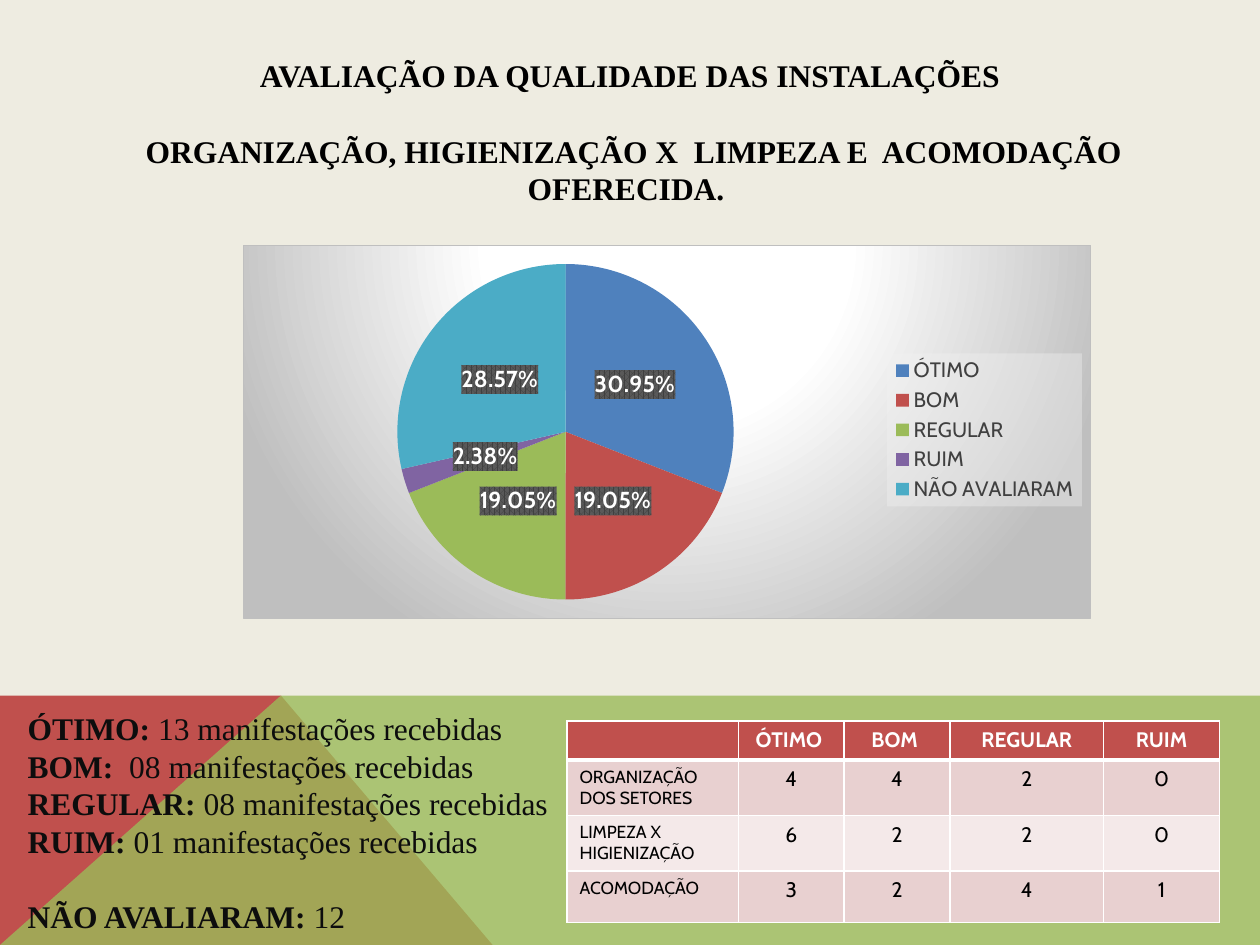
from lxml.etree import SubElement
from pptx import Presentation
from pptx.chart.data import CategoryChartData
from pptx.dml.color import RGBColor
from pptx.enum.chart import XL_CHART_TYPE as ChartType
from pptx.enum.chart import XL_LABEL_POSITION as LabelPosition
from pptx.enum.chart import XL_LEGEND_POSITION as LegendPosition
from pptx.enum.text import MSO_ANCHOR as Anchor
from pptx.enum.text import MSO_AUTO_SIZE as AutoSize
from pptx.enum.text import PP_ALIGN as Align
from pptx.oxml import parse_xml
from pptx.oxml.ns import nsdecls, qn
from pptx.util import Inches, Pt

THEME = {
    "paper": "EEECE1", "ink": "000000", "soft": "0D0D0D", "grey": "404040",
    "white": "FFFFFF", "red": "C0504D", "green": "9BBB59",
    "bands": ["E8D0D0", "F4E9E9"],
    "slices": ["4F81BD", "C0504D", "9BBB59", "8064A2", "4BACC6"],
    "serif": "Times New Roman", "sans": "Cabin",
    "text": 18, "line": 21.5, "label": 13.3, "cell": 12, "small": 10,
}

deck = Presentation()
deck.slide_width, deck.slide_height = Inches(10), Inches(7.5)
WIDE, HIGH = deck.slide_width, deck.slide_height
page = deck.slides.add_slide(deck.slide_layouts[1])
page.background.fill.solid()
page.background.fill.fore_color.rgb = RGBColor.from_string(THEME["paper"])


def set_font(font, face, size, color, bold=False):
    font.name, font.size, font.bold = face, Pt(size), bold
    font.color.rgb = RGBColor.from_string(color)


def style_part(part, paint, layout=None, target=""):
    """Give a chart part its paint and, if wanted, its place in the chart."""
    part.find(qn("c:txPr")).addprevious(
        parse_xml(f'<c:spPr {nsdecls("c", "a")}>{paint}</c:spPr>'))
    if layout:
        area = part if not target else part.find(f".//{qn('c:plotArea')}")
        for old in area.findall(qn("c:layout")):
            area.remove(old)
        sizes = "".join(f'<c:{key} val="{value}"/>' for key, value in zip("xywh", layout))
        modes = '<c:xMode val="edge"/><c:yMode val="edge"/>'
        area.insert(0 if target else 1, parse_xml(
            f'<c:layout {nsdecls("c")}><c:manualLayout>{target}{modes}{sizes}'
            "</c:manualLayout></c:layout>"))


# Coloured band along the foot, corners as shares of the slide
TOP, PEAK = 0.736, 0.223
bands = [
    ("red", [(0, 1), (0, TOP), (PEAK, TOP), (0.391, 1)], 100),
    ("green", [(0, 1), (PEAK, TOP), (1, TOP), (1, 1)], 80),
]
for color, corners, opacity in bands:
    points = [(int(WIDE * x), int(HIGH * y)) for x, y in corners]
    pen = page.shapes.build_freeform(*points[0])
    pen.add_line_segments(points[1:], close=True)
    band = pen.convert_to_shape()
    band.shadow.inherit = False
    band.line.fill.background()
    band.fill.solid()
    band.fill.fore_color.rgb = RGBColor.from_string(THEME[color])
    if opacity < 100:
        tint = band.element.spPr.find(f".//{qn('a:srgbClr')}")
        SubElement(tint, qn("a:alpha"), val=str(opacity * 1000))

# Title and counts, each line a list of (words, bold), last flag a gap above
heading = [
    ([("AVALIAÇÃO DA QUALIDADE DAS INSTALAÇÕES", True)], False),
    ([(" ORGANIZAÇÃO, HIGIENIZAÇÃO X  LIMPEZA E  ACOMODAÇÃO OFERECIDA. ", True)], True),
]
counts = [
    ([("ÓTIMO:", True), (" 13 manifestações recebidas", False)], False),
    ([("BOM: ", True), (" 08 manifestações recebidas", False)], False),
    ([("REGULAR: ", True), ("08 manifestações recebidas", False)], False),
    ([("RUIM: ", True), ("01 manifestações recebidas", False)], False),
    ([("NÃO AVALIARAM: ", True), ("12", False)], True),
]
title, body = page.shapes.title, page.placeholders[1]
texts = [
    (title, heading, (0.047, 0.053, 0.906, 0.173), Anchor.MIDDLE, Align.CENTER, "ink"),
    (body, counts, (0.012, 0.744, 0.438, 0.256), Anchor.TOP, Align.LEFT, "soft"),
]
for box, lines, (x, y, w, h), anchor, align, color in texts:
    page.shapes.element.append(box.element)  # bring in front of the band
    box.left, box.top = int(WIDE * x), int(HIGH * y)
    box.width, box.height = int(WIDE * w), int(HIGH * h)
    frame = box.text_frame
    frame.word_wrap, frame.auto_size = box is title, AutoSize.NONE
    frame.vertical_anchor = anchor
    for number, (spans, gap) in enumerate(lines):
        para = frame.add_paragraph() if number else frame.paragraphs[0]
        para.alignment, para.line_spacing = align, Pt(THEME["line"])
        para.space_before = Pt(THEME["line"] if gap else 0)
        props = para._p.get_or_add_pPr()
        props.set("marL", "0")
        props.set("indent", "0")
        SubElement(props, qn("a:buNone"))
        for words, bold in spans:
            span = para.add_run()
            span.text = words
            set_font(span.font, THEME["serif"], THEME["text"], THEME[color], bold)

# Pie chart
data = CategoryChartData()
data.categories = ["ÓTIMO", "BOM", "REGULAR", "RUIM", "NÃO AVALIARAM"]
data.add_series("Series 1", [30.95, 19.05, 19.05, 2.38, 28.57])
chart = page.shapes.add_chart(
    ChartType.PIE, int(WIDE * 0.193), int(HIGH * 0.259),
    int(WIDE * 0.673), int(HIGH * 0.396), data).chart
chart.has_title = False
set_font(chart.font, THEME["sans"], THEME["small"], THEME["ink"])
stops = "".join(
    f'<a:gs pos="{place * 1000}"><a:srgbClr val="{color}"/></a:gs>'
    for place, color in [(0, "FFFFFF"), (39, "FFFFFF"), (100, "BFBFBF")])
style_part(
    chart._chartSpace,
    f'<a:gradFill><a:gsLst>{stops}</a:gsLst><a:path path="circle">'
    '<a:fillToRect l="50000" t="-80000" r="50000" b="180000"/></a:path></a:gradFill>'
    '<a:ln w="9525"><a:solidFill><a:srgbClr val="BFBFBF"/></a:solidFill></a:ln>',
    (0.18, 0.05, 0.4, 0.9), '<c:layoutTarget val="inner"/>')

plot = chart.plots[0]
plot.vary_by_categories = True
series = plot.series[0]
for number, color in enumerate(THEME["slices"]):
    part = series.points[number].format
    part.fill.solid()
    part.fill.fore_color.rgb = RGBColor.from_string(color)
    part.line.fill.background()

labels = series.data_labels
labels.show_percentage, labels.show_value = True, False
labels.number_format, labels.number_format_is_linked = "0.00%", False
labels.position = LabelPosition.CENTER
set_font(labels.font, THEME["sans"], THEME["label"], THEME["white"], True)
style_part(
    labels._element,
    f'<a:pattFill prst="pct75"><a:fgClr><a:srgbClr val="{THEME["grey"]}"/></a:fgClr>'
    '<a:bgClr><a:srgbClr val="595959"/></a:bgClr></a:pattFill>')

chart.has_legend = True
legend = chart.legend
legend.position, legend.include_in_layout = LegendPosition.RIGHT, False
set_font(legend.font, THEME["sans"], THEME["cell"], THEME["grey"])
style_part(
    legend._element,
    '<a:solidFill><a:srgbClr val="F2F2F2"><a:alpha val="39000"/></a:srgbClr></a:solidFill>',
    (0.76, 0.29, 0.23, 0.41))

# Table of answers by topic
rows = [
    ["", "ÓTIMO ", "BOM ", "REGULAR", "RUIM"],
    ["ORGANIZAÇÃO DOS SETORES", "4", "4", "2", "0"],
    ["LIMPEZA X HIGIENIZAÇÃO", "6", "2", "2", "0"],
    ["ACOMODAÇÃO", "3", "2", "4", "1"],
]
table = page.shapes.add_table(
    4, 5, int(WIDE * 0.45), int(HIGH * 0.763), int(WIDE * 0.518), int(HIGH * 0.215)).table
for column, width in zip(table.columns, [1.36, 0.84, 0.84, 1.22, 0.92]):
    column.width = Inches(width)
for row, height in zip(table.rows, [0.31, 0.44, 0.44, 0.41]):
    row.height = Inches(height)
for r, row in enumerate(rows):
    for c, words in enumerate(row):
        cell = table.cell(r, c)
        cell.fill.solid()
        fill = THEME["bands"][(r - 1) % 2] if r else THEME["red"]
        cell.fill.fore_color.rgb = RGBColor.from_string(fill)
        para = cell.text_frame.paragraphs[0]
        para.alignment = Align.CENTER if c else Align.LEFT
        if words:
            span = para.add_run()
            span.text = words
            size = THEME["small"] if r and not c else THEME["cell"]
            set_font(span.font, THEME["sans"], size, THEME["ink" if r else "white"], not r)
        else:
            SubElement(para._p, qn("a:endParaRPr"), sz=str(THEME["cell"] * 100))
        for place, side in enumerate("LRTB"):
            heavy = (r, side) in [(0, "B"), (1, "T")]
            cell._tc.get_or_add_tcPr().insert(place, parse_xml(
                f'<a:ln{side} {nsdecls("a")} w="{38100 if heavy else 12700}"><a:solidFill>'
                f'<a:srgbClr val="{THEME["white"]}"/></a:solidFill></a:ln{side}>'))

deck.save("out.pptx")
